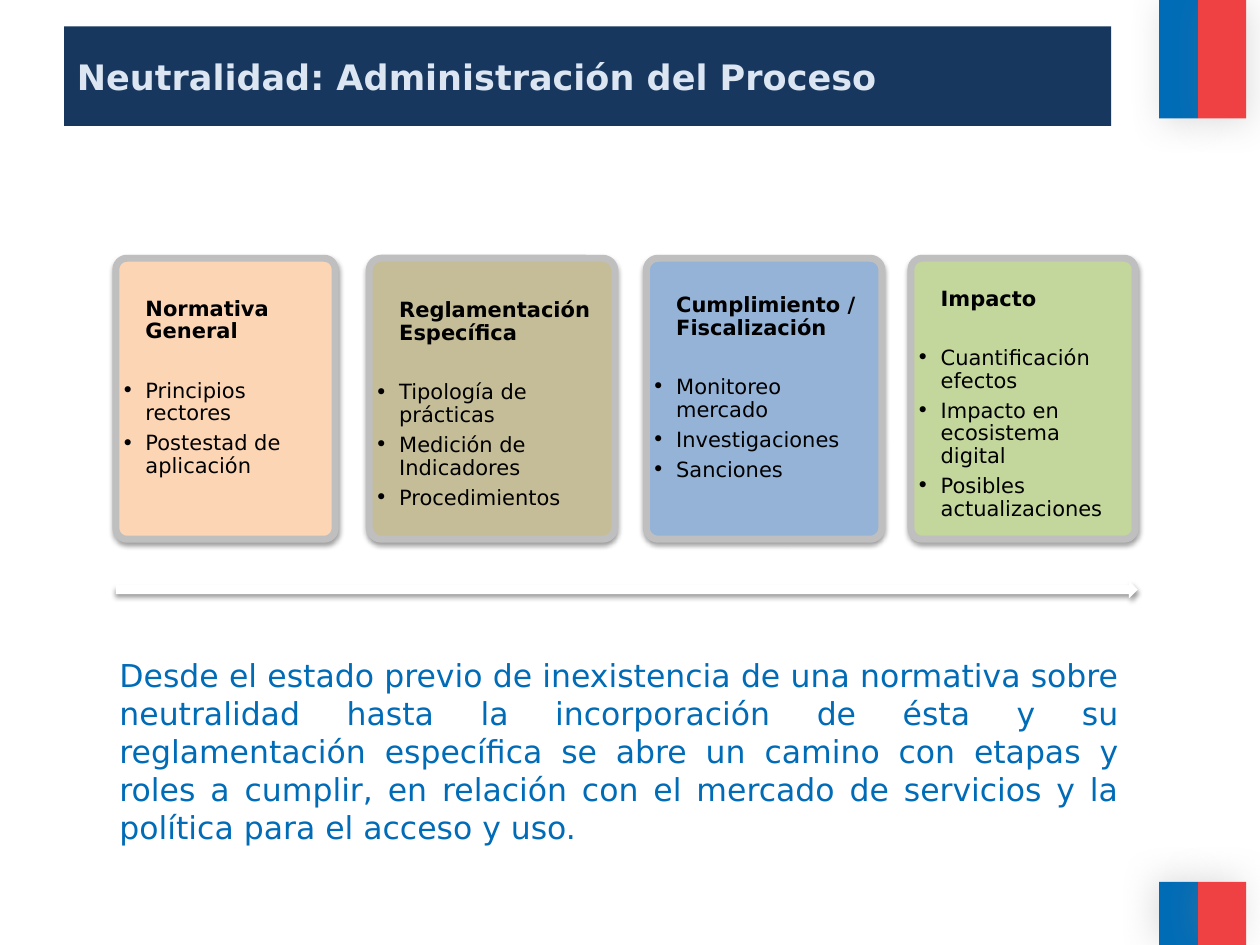
from dataclasses import dataclass

from lxml.etree import SubElement
from pptx import Presentation
from pptx.dml.color import RGBColor
from pptx.enum.shapes import MSO_SHAPE
from pptx.enum.text import MSO_ANCHOR, MSO_AUTO_SIZE, PP_ALIGN
from pptx.oxml.ns import qn
from pptx.util import Inches, Pt


@dataclass(frozen=True)
class Theme:
    font: str = "DejaVu Sans"
    navy: str = "17375E"
    pale: str = "DCE6F2"
    blue: str = "006CB7"
    red: str = "EF4144"
    black: str = "000000"
    white: str = "FFFFFF"
    border: str = "BFBFBF"
    title_size: int = 20
    body_size: int = 18
    card_size: int = 12


THEME = Theme()
CARD_SHADOW = ("000000", 38, 3.1, 1.6, 90)
CARD_TOP, CARD_HEIGHT = 2.05, 2.23
CARDS = [
    (0.92, 1.74, 0.29, "FCD5B5", "Normativa General",
     ["Principios rectores", "Postestad de aplicación"]),
    (2.93, 1.95, 0.30, "C4BD97", "Reglamentación Específica",
     ["Tipología de prácticas", "Medición de Indicadores", "Procedimientos"]),
    (5.13, 1.87, 0.26, "95B3D7", "Cumplimiento / Fiscalización",
     ["Monitoreo mercado", "Investigaciones", "Sanciones"]),
    (7.23, 1.78, 0.21, "C3D69B", "Impacto",
     ["Cuantificación efectos", "Impacto en ecosistema digital",
      "Posibles actualizaciones"]),
]
SUMMARY = (
    "Desde el estado previo de inexistencia de una normativa sobre neutralidad "
    "hasta la incorporación de ésta y su reglamentación específica se abre un "
    "camino con etapas y roles a cumplir, en relación con el mercado de "
    "servicios y la política para el acceso y uso."
)


def set_attrs(obj, **values):
    for name, value in values.items():
        setattr(obj, name, value)


def set_fill(sp, color):
    sp.fill.solid()
    sp.fill.fore_color.rgb = RGBColor.from_string(color)


def write(p, text, size, color, bold=False, **layout):
    set_attrs(p, **layout)
    r = p.add_run()
    r.text = text
    set_attrs(r.font, name=THEME.font, size=Pt(size), bold=bold)
    r.font.color.rgb = RGBColor.from_string(color)


def add_shadow(sp, color, opacity, blur, distance, angle):
    sp.shadow.inherit = False
    effects = sp._element.spPr.find(qn("a:effectLst"))
    shadow = SubElement(effects, qn("a:outerShdw"), blurRad=str(Pt(blur)),
                        dist=str(Pt(distance)), dir=str(angle * 60000),
                        rotWithShape="0")
    clr = SubElement(shadow, qn("a:srgbClr"), val=color)
    SubElement(clr, qn("a:alpha"), val=str(opacity * 1000))


def add_block(s, kind, box, color, shadow):
    sp = s.shapes.add_shape(kind, *map(Inches, box))
    set_fill(sp, color)
    sp.line.fill.background()
    add_shadow(sp, *shadow)
    return sp


def set_indent(p, first, bullet=None):
    pPr = p._p.get_or_add_pPr()
    pPr.set("marL", str(Inches(0.2)))
    pPr.set("indent", str(Inches(first)))
    if bullet:
        SubElement(pPr, qn("a:buFont"), typeface=THEME.font)
        SubElement(pPr, qn("a:buChar"), char=bullet)


def add_flag(s, top, height, angle):
    for left, width, color in ((9.2, 0.31, THEME.blue), (9.51, 0.38, THEME.red)):
        add_block(s, MSO_SHAPE.RECTANGLE, (left, top, width, height), color,
                  ("808080", 25, 20, 3, angle))


def add_title(s, text):
    sp = s.shapes.title
    set_attrs(sp, left=Inches(0.51), top=Inches(0.21),
              width=Inches(8.31), height=Inches(0.79))
    set_fill(sp, THEME.navy)
    tf = sp.text_frame
    set_attrs(tf, vertical_anchor=MSO_ANCHOR.MIDDLE, word_wrap=True,
              auto_size=MSO_AUTO_SIZE.NONE)
    write(tf.paragraphs[0], text, THEME.title_size, THEME.pale, True,
          alignment=PP_ALIGN.LEFT)


def add_card(s, left, width, inset, color, heading, items):
    sp = add_block(s, MSO_SHAPE.ROUNDED_RECTANGLE,
                   (left, CARD_TOP, width, CARD_HEIGHT), color, CARD_SHADOW)
    sp.adjustments[0] = 0.05
    sp.line.color.rgb = RGBColor.from_string(THEME.border)
    sp.line.width = Pt(4)
    tf = sp.text_frame
    edge = Inches(0.01)
    set_attrs(tf, word_wrap=True, vertical_anchor=MSO_ANCHOR.TOP,
              margin_left=edge, margin_right=edge, margin_bottom=edge,
              margin_top=Inches(inset))
    layout = {"alignment": PP_ALIGN.LEFT, "line_spacing": 0.9}
    p = tf.paragraphs[0]
    write(p, heading, THEME.card_size, THEME.black, True,
          space_after=Pt(21), **layout)
    set_indent(p, 0)
    for item in items:
        p = tf.add_paragraph()
        write(p, item, THEME.card_size, THEME.black,
              space_after=Pt(4.2), **layout)
        set_indent(p, -0.19, "•")


def add_summary(s, text):
    sp = s.shapes.add_textbox(Inches(0.85), Inches(5.16), Inches(8.13), Inches(1.62))
    tf = sp.text_frame
    tf.word_wrap = True
    write(tf.paragraphs[0], text, THEME.body_size, THEME.blue,
          alignment=PP_ALIGN.JUSTIFY, space_before=Pt(12))


def main():
    prs = Presentation()
    set_attrs(prs, slide_width=Inches(10), slide_height=Inches(7.5))
    s = prs.slides.add_slide(prs.slide_layouts[5])
    add_flag(s, 0, 0.94, 45)
    add_flag(s, 7, 0.5, 215)
    add_title(s, "Neutralidad: Administración del Proceso")
    for card in CARDS:
        add_card(s, *card)
    add_summary(s, SUMMARY)
    add_block(s, MSO_SHAPE.RIGHT_ARROW, (0.92, 4.61, 8.11, 0.14),
              THEME.white, CARD_SHADOW)
    prs.save("out.pptx")


if __name__ == "__main__":
    main()
